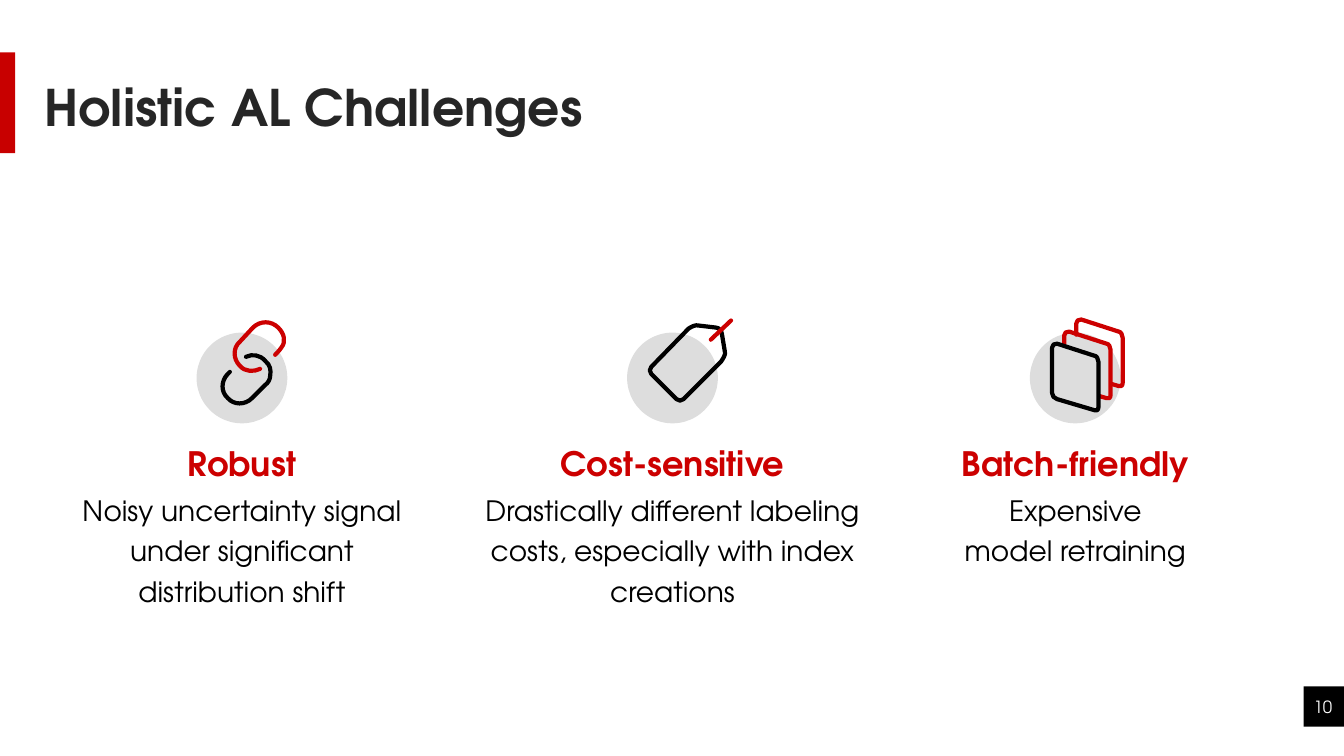
from dataclasses import dataclass

from lxml import etree
from pptx import Presentation
from pptx.dml.color import RGBColor
from pptx.enum.shapes import MSO_CONNECTOR, MSO_SHAPE
from pptx.enum.text import MSO_ANCHOR, MSO_AUTO_SIZE, PP_ALIGN
from pptx.oxml.ns import qn
from pptx.util import Inches, Pt

RECTANGLE, OVAL = MSO_SHAPE.RECTANGLE, MSO_SHAPE.OVAL
STRAIGHT = MSO_CONNECTOR.STRAIGHT
LEFT, CENTER = PP_ALIGN.LEFT, PP_ALIGN.CENTER
TOP, MIDDLE = MSO_ANCHOR.TOP, MSO_ANCHOR.MIDDLE
NO_RESIZE, GROW = MSO_AUTO_SIZE.NONE, MSO_AUTO_SIZE.SHAPE_TO_FIT_TEXT


@dataclass(frozen=True)
class Theme:
    font: str = "TeX Gyre Adventor"
    bar: str = "C80000"
    accent: str = "CC0000"
    ink: str = "000000"
    title: str = "262626"
    disc: str = "DDDDDD"
    paper: str = "FFFFFF"
    title_size: int = 36
    heading_size: int = 24
    body_size: int = 20
    number_size: int = 12
    stroke: int = 3


THEME = Theme()
DISC_SIZE = 0.9
CARD_SHIFT = 0.12

LOWER_LINK = [
    (0.49, 0.24), (0.55, 0.21, 0.63, 0.22, 0.68, 0.28),
    (0.73, 0.32, 0.74, 0.37, 0.73, 0.43), (0.73, 0.46, 0.71, 0.5, 0.68, 0.52),
    (0.55, 0.65), (0.48, 0.72, 0.37, 0.72, 0.31, 0.65),
    (0.24, 0.59, 0.24, 0.48, 0.31, 0.41), (0.33, 0.39),
]
UPPER_LINK = [
    (0.63, 0.36), (0.57, 0.39, 0.48, 0.39, 0.43, 0.33),
    (0.36, 0.26, 0.36, 0.15, 0.43, 0.09), (0.56, -0.05),
    (0.63, -0.12, 0.74, -0.12, 0.81, -0.05),
    (0.87, 0.01, 0.89, 0.09, 0.84, 0.15), (0.82, 0.18, 0.78, 0.22, 0.78, 0.22),
]
TAG = [
    (0.97, 0.19), (0.94, 0.01), (0.94, 0, 0.93, -0.02, 0.92, -0.03),
    (0.91, -0.04, 0.9, -0.05, 0.88, -0.05), (0.71, -0.07),
    (0.68, -0.08, 0.64, -0.06, 0.61, -0.04), (0.24, 0.34),
    (0.22, 0.36, 0.22, 0.39, 0.24, 0.41), (0.49, 0.66),
    (0.51, 0.68, 0.54, 0.68, 0.56, 0.66), (0.93, 0.29),
    (0.95, 0.26, 0.98, 0.22, 0.97, 0.19),
]
OPEN_CARD = [
    (0, 0.15), (0, 0.04), (0, 0.01, 0.02, 0, 0.05, 0), (0.42, 0.12),
    (0.44, 0.12, 0.46, 0.15, 0.46, 0.18), (0.46, 0.63),
    (0.46, 0.66, 0.44, 0.67, 0.42, 0.66), (0.35, 0.64),
]
FULL_CARD = OPEN_CARD[:-1] + [(0.05, 0.55), (0.02, 0.54, 0, 0.52, 0, 0.49)]


def color(value):
    return RGBColor.from_string(value)


def write_text(shape, text, size, ink, bold=False, align=CENTER, anchor=TOP,
               spacing=1.0, auto_size=NO_RESIZE):
    frame = shape.text_frame
    frame_format = {"word_wrap": True, "vertical_anchor": anchor, "auto_size": auto_size}
    for name, value in frame_format.items():
        setattr(frame, name, value)
    paragraph = frame.paragraphs[0]
    paragraph.alignment, paragraph.line_spacing = align, spacing
    run = paragraph.add_run()
    run.text = text
    for name, value in {"name": THEME.font, "size": Pt(size), "bold": bold}.items():
        setattr(run.font, name, value)
    run.font.color.rgb = color(ink)


def add_text(shapes, box, text, size, ink, **text_format):
    write_text(shapes.add_textbox(*map(Inches, box)), text, size, ink, **text_format)


def add_block(shapes, kind, box, fill):
    shape = shapes.add_shape(kind, *map(Inches, box))
    shape.shadow.inherit = False
    shape.fill.solid()
    shape.fill.fore_color.rgb = color(fill)
    shape.line.fill.background()


def style_stroke(shape, ink):
    shape.line.color.rgb = color(ink)
    shape.line.width = Pt(THEME.stroke)
    line = shape.element.spPr.find(qn("a:ln"))
    line.set("cap", "rnd")
    etree.SubElement(line, qn("a:round"))


def bend_curves(shape, steps):
    outline = next(shape.element.iter(qn("a:path")))
    nodes = iter(outline.findall(qn("a:lnTo")))
    for step in steps[1:]:
        corners = [next(nodes) for _ in range(len(step) // 2)]
        if len(corners) == 3:
            curve = etree.Element(qn("a:cubicBezTo"))
            corners[0].addprevious(curve)
            for corner in corners:
                curve.append(corner[0])
                outline.remove(corner)


def add_outline(shapes, left, top, steps, ink, close=False, fill=None):
    points = [(Inches(left + x), Inches(top + y))
              for step in steps for x, y in zip(step[::2], step[1::2])]
    builder = shapes.build_freeform(*points[0])
    builder.add_line_segments(points[1:], close=False)
    shape = builder.convert_to_shape()
    bend_curves(shape, steps)
    if close:
        etree.SubElement(next(shape.element.iter(qn("a:path"))), qn("a:close"))
    shape.shadow.inherit = False
    if fill:
        shape.fill.solid()
        shape.fill.fore_color.rgb = color(fill)
    else:
        shape.fill.background()
    style_stroke(shape, ink)


def draw_links(shapes, left, top):
    add_outline(shapes, left, top, LOWER_LINK, THEME.ink)
    add_outline(shapes, left, top, UPPER_LINK, THEME.accent)


def draw_tag(shapes, left, top):
    add_outline(shapes, left, top, TAG, THEME.ink, close=True)
    ends = (left + 0.83, top + 0.07, left + 1.03, top - 0.12)
    string = shapes.add_connector(STRAIGHT, *map(Inches, ends))
    style_stroke(string, THEME.accent)
    etree.SubElement(string.element.spPr, qn("a:effectLst"))


def draw_cards(shapes, left, top):
    for depth in (2, 1, 0):
        x = left + 0.22 + CARD_SHIFT * depth
        y = top + 0.11 - CARD_SHIFT * depth
        if depth:
            add_outline(shapes, x, y, OPEN_CARD, THEME.accent)
        else:
            add_outline(shapes, x, y, FULL_CARD, THEME.ink, close=True, fill=THEME.disc)


def add_challenge(slide, box, heading, body, draw_icon):
    left, top, width, height = box
    center = left + width / 2
    shapes = slide.shapes.add_group_shape().shapes
    disc_left = center - DISC_SIZE / 2
    add_block(shapes, OVAL, (disc_left, top, DISC_SIZE, DISC_SIZE), THEME.disc)
    add_text(shapes, (center - 1.4, top + 1.04, 2.8, 0.5), heading,
             THEME.heading_size, THEME.accent, bold=True, auto_size=GROW)
    add_text(shapes, (left, top + 1.48, width, height - 1.48), body,
             THEME.body_size, THEME.ink, spacing=1.2, auto_size=GROW)
    draw_icon(shapes, disc_left, top)


def add_header(slide, box, text):
    left, top, width, height = box
    add_block(slide.shapes, RECTANGLE, (0, top + 0.18, 0.15, 1), THEME.bar)
    title = slide.shapes.title
    for name, value in zip(("left", "top", "width", "height"), box):
        setattr(title, name, Inches(value))
    write_text(title, text, THEME.title_size, THEME.title, bold=True,
               align=LEFT, anchor=MIDDLE, spacing=0.9)


def add_page_number(slide, box, number):
    left, top, width, height = box
    add_block(slide.shapes, RECTANGLE, box, THEME.ink)
    add_text(slide.shapes, (left - 0.08, top, width + 0.14, height), number,
             THEME.number_size, THEME.paper, anchor=MIDDLE)


def main():
    presentation = Presentation()
    presentation.slide_width, presentation.slide_height = Inches(13.33), Inches(7.5)
    slide = presentation.slides.add_slide(presentation.slide_layouts[5])
    add_header(slide, (0.34, 0.34, 11.5, 1.5), "Holistic AL Challenges")
    add_page_number(slide, (12.93, 6.81, 0.4, 0.4), "10")
    challenges = [
        (0.6, 3.6, 2.78, "Robust",
         "Noisy uncertainty signal under significant distribution shift", draw_links),
        (4.67, 4, 2.78, "Cost-sensitive",
         "Drastically different labeling costs, especially with index creations", draw_tag),
        (9.44, 2.45, 2.37, "Batch-friendly", "Expensive model retraining", draw_cards),
    ]
    for left, width, height, heading, body, draw_icon in challenges:
        add_challenge(slide, (left, 3.3, width, height), heading, body, draw_icon)
    presentation.save("out.pptx")


if __name__ == "__main__":
    main()
